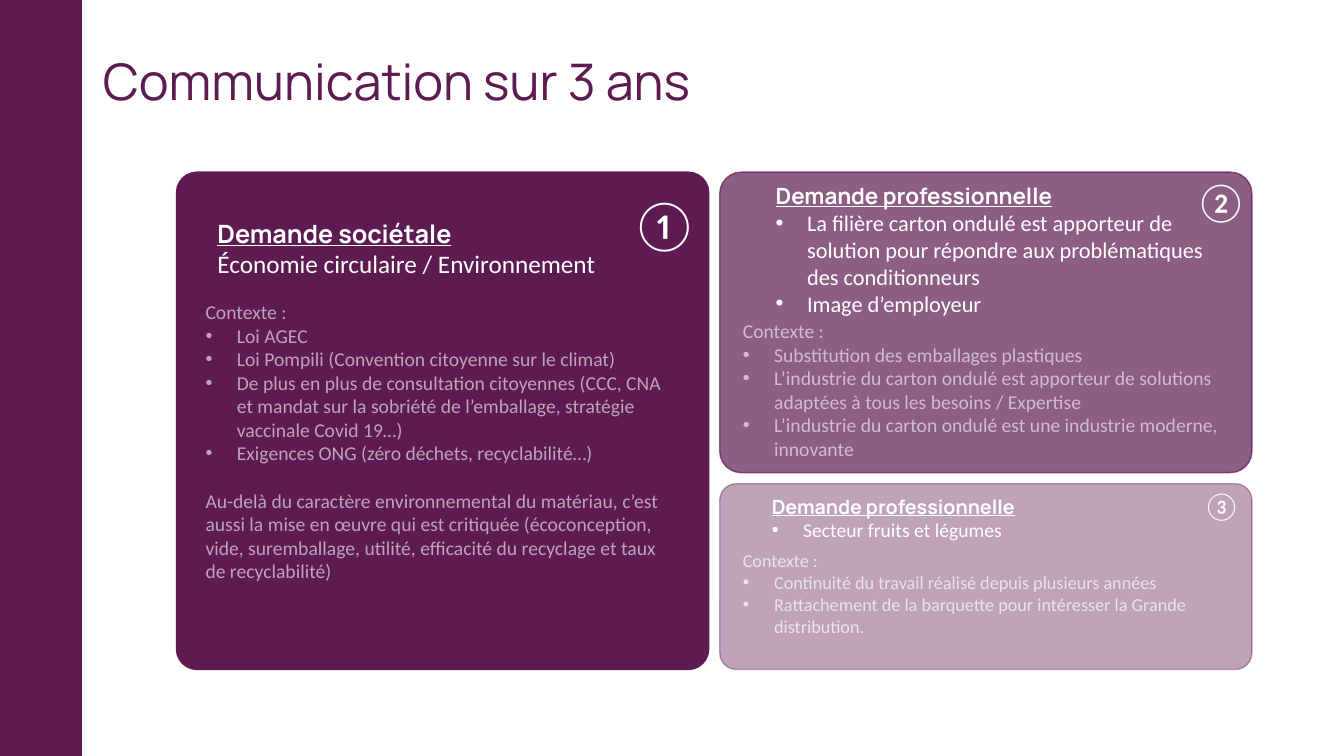
import pptx
import pptx.util
import pptx.dml.color
import pptx.enum.shapes
import pptx.enum.text
import pptx.oxml
import pptx.oxml.ns

Cm, Pt = pptx.util.Cm, pptx.util.Pt

COLORS = {"plum": "5E1B51", "white": "FFFFFF", "mauve": "BFA4B9",
          "pink": "D1BDCD", "pale": "ECE4EA"}
HEAD, BODY = "Manrope", "Calibri"
TITLE = "Communication sur 3 ans"

DEMANDS = [
    {"heading": "Demande sociétale", "size": 18, "box": (5.23, 5.38, 10.69, 1.8),
     "lines": [("plain", "Économie circulaire / Environnement")],
     "context_box": (4.93, 7.44, 12.19, 8.64), "context_size": 14, "context_color": "mauve",
     "context": [
         ("bullet", "Loi AGEC"),
         ("bullet", "Loi Pompili (Convention citoyenne sur le climat)"),
         ("bullet", "De plus en plus de consultation citoyennes (CCC, CNA et mandat sur "
                    "la sobriété de l’emballage, stratégie vaccinale Covid 19…)"),
         ("bullet", "Exigences ONG (zéro déchets, recyclabilité…)"),
         ("spaced", "Au-delà du caractère environnemental du matériau, c’est aussi la mise "
                    "en œuvre qui est critiquée (écoconception, vide, suremballage, utilité, "
                    "efficacité du recyclage et taux de recyclabilité)")],
     "number": "①", "number_size": 36, "number_box": (15.67, 4.75, 1.65, 1.8),
     "opacity": 100, "corner": 0.041},
    {"heading": "Demande professionnelle", "size": 16, "box": (19.3, 4.47, 11.86, 3.68),
     "lines": [
         ("bullet", "La filière carton ondulé est apporteur de solution pour répondre aux "
                    "problématiques des conditionneurs"),
         ("bullet", "Image d’employeur")],
     "context_box": (18.47, 7.92, 13.08, 4.45), "context_size": 14, "context_color": "pink",
     "context": [
         ("bullet", "Substitution des emballages plastiques"),
         ("bullet", "L’industrie du carton ondulé est apporteur de solutions adaptées à tous "
                    "les besoins / Expertise"),
         ("bullet", "L’industrie du carton ondulé est une industrie moderne, innovante")],
     "number": "②", "number_size": 28, "number_box": (29.87, 4.34, 1.4, 1.45),
     "opacity": 70, "corner": 0.071},
    {"heading": "Demande professionnelle", "size": 14, "box": (19.2, 12.34, 10.69, 1.45),
     "lines": [("bullet", "Secteur fruits et légumes")],
     "context_box": (18.47, 13.72, 12.19, 3.0), "context_size": 13, "context_color": "pale",
     "context": [
         ("bullet", "Continuité du travail réalisé depuis plusieurs années"),
         ("bullet", "Rattachement de la barquette pour intéresser la Grande distribution.")],
     "number": "③", "number_size": 20, "number_box": (30.07, 12.19, 1.14, 1.12),
     "opacity": 40, "corner": 0.089},
]

LEFT, TOP, CARD_W, FULL_H, UPPER_H, GAP = 4.45, 4.34, 13.41, 12.53, 7.57, 0.28
RIGHT = LEFT + CARD_W + GAP
CARDS = [(LEFT, TOP, CARD_W, FULL_H),
         (RIGHT, TOP, CARD_W, UPPER_H),
         (RIGHT, TOP + UPPER_H + GAP, CARD_W, FULL_H - UPPER_H - GAP)]


def rgb(name):
    return pptx.dml.color.RGBColor.from_string(COLORS[name])


def add_panel(slide, kind, box, opacity=100):
    sp = slide.shapes.add_shape(kind, *map(Cm, box))
    sp.shadow.inherit = False
    sp.line.width = Pt(1)
    sp.fill.solid()
    for fill in (sp.fill, sp.line):
        fill_color = fill.fore_color if fill is sp.fill else fill.color
        fill_color.rgb = rgb("plum")
    if opacity < 100:
        for clr in sp._element.spPr.iter(pptx.oxml.ns.qn("a:srgbClr")):
            alpha = pptx.oxml.parse_xml(
                f'<a:alpha {pptx.oxml.ns.nsdecls("a")} val="{opacity * 1000}"/>')
            clr.append(alpha)
    return sp


def add_run(p, text, size, color, font=BODY, strong=False):
    r = p.add_run()
    r.text = text
    r.font.size, r.font.name = Pt(size), font
    r.font.color.rgb = rgb(color)
    if strong:
        r.font.bold = r.font.underline = True


def add_bullet(p):
    pPr = p._p.get_or_add_pPr()
    pPr.set("marL", str(Cm(0.79)))
    pPr.set("indent", str(-Cm(0.79)))
    for tag in ('buFont typeface="Arial"', 'buChar char="•"'):
        pPr.append(pptx.oxml.parse_xml(f'<a:{tag} {pptx.oxml.ns.nsdecls("a")}/>'))


def add_text(slide, box, first, lines, size, color, font=BODY, strong=False, wrap=True):
    tf = slide.shapes.add_textbox(*map(Cm, box)).text_frame
    tf.word_wrap = wrap
    tf.auto_size = pptx.enum.text.MSO_AUTO_SIZE.SHAPE_TO_FIT_TEXT
    add_run(tf.paragraphs[0], first, size, color, font, strong)
    for style, text in lines:
        p = tf.add_paragraph()
        if style == "bullet":
            add_bullet(p)
        elif style == "spaced":
            p.space_before = Pt(17)
        add_run(p, text, size, color)


def main():
    prs = pptx.Presentation()
    prs.slide_width, prs.slide_height = Cm(33.87), Cm(19.05)
    slide = prs.slides.add_slide(prs.slide_layouts[5])
    shapes = pptx.enum.shapes.MSO_SHAPE

    title = slide.shapes.title
    title.left, title.top, title.width, title.height = map(Cm, (2.34, 0.28, 29.21, 3.68))
    tf = title.text_frame
    tf.word_wrap = True
    tf.auto_size = pptx.enum.text.MSO_AUTO_SIZE.NONE
    tf.vertical_anchor = pptx.enum.text.MSO_ANCHOR.MIDDLE
    p = tf.paragraphs[0]
    p.alignment = pptx.enum.text.PP_ALIGN.LEFT
    p.line_spacing = 0.9
    add_run(p, TITLE, 36, "plum", HEAD)

    add_panel(slide, shapes.RECTANGLE, (0, 0, 2.06, 19.05))
    for d, card in zip(DEMANDS, CARDS):
        sp = add_panel(slide, shapes.ROUNDED_RECTANGLE, card, d["opacity"])
        sp.adjustments[0] = d["corner"]
        add_text(slide, d["box"], d["heading"], d["lines"], d["size"], "white", HEAD, True)
        add_text(slide, d["context_box"], "Contexte :", d["context"],
                 d["context_size"], d["context_color"])
        add_text(slide, d["number_box"], d["number"], [], d["number_size"], "white", wrap=False)

    prs.save("out.pptx")


if __name__ == "__main__":
    main()
